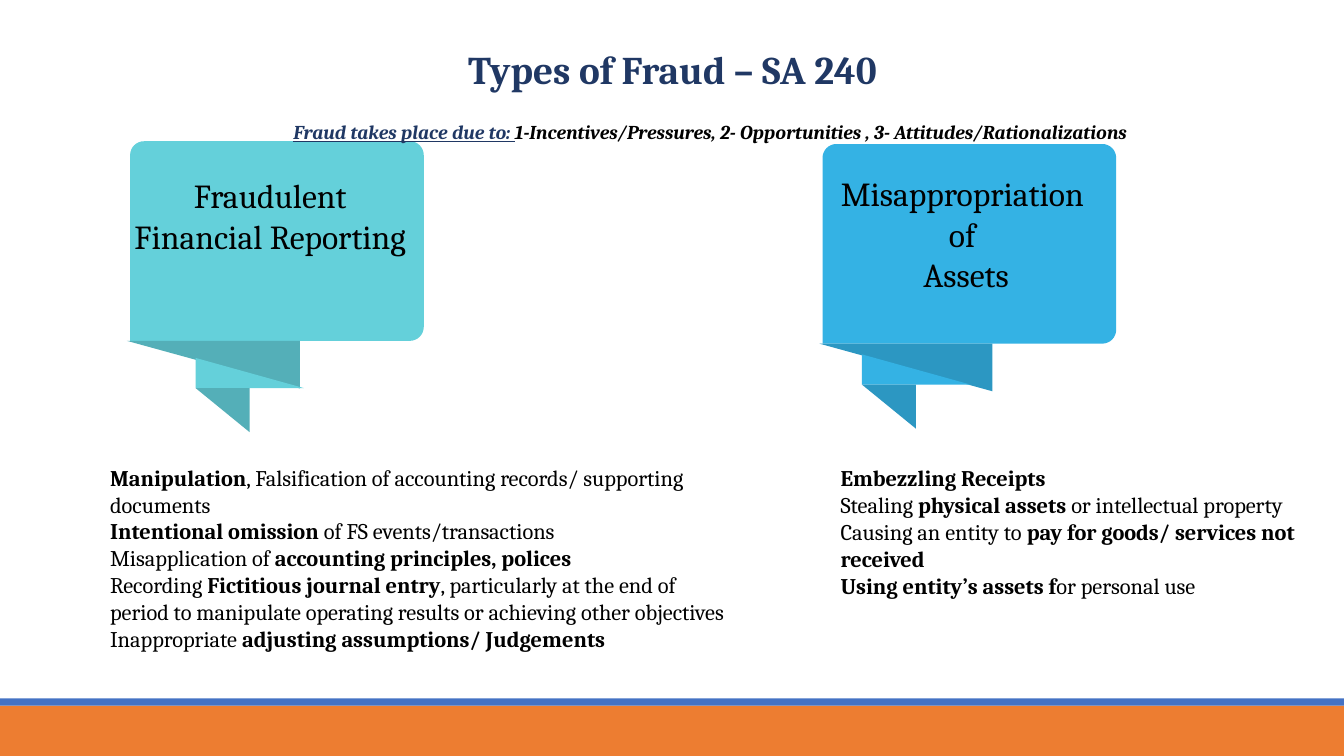
"""Build the slide on the types of fraud under SA 240."""
from dataclasses import dataclass
from math import cos, pi, sin

from lxml import etree
from pptx import Presentation
from pptx.dml.color import RGBColor
from pptx.enum.shapes import MSO_SHAPE
from pptx.enum.text import MSO_ANCHOR, MSO_AUTO_SIZE, PP_ALIGN
from pptx.oxml.ns import qn
from pptx.util import Cm, Pt

RECT = MSO_SHAPE.RECTANGLE
TOP = MSO_ANCHOR.TOP
FIXED = MSO_AUTO_SIZE.NONE
LEFT, MID = PP_ALIGN.LEFT, PP_ALIGN.CENTER
WIDE, HIGH = 33.87, 19.05


@dataclass(frozen=True)
class Theme:
    font: str = "Cambria"
    ink: str = "000000"
    navy: str = "203864"
    blue: str = "4472C4"
    orange: str = "ED7D31"
    teal: tuple = ("64D0DA", "54AFB8")
    sky: tuple = ("34B2E4", "2C97C2")
    title: int = 28
    card: int = 24
    body: int = 16
    note: int = 14


def write(frame, text, *, font, size, color, align=LEFT, lead=1.0,
          indent=0, inset=None, bold=False, italic=False, accent=None):
    """Fill a frame line by line; text between asterisks takes the accent."""
    frame.word_wrap = True
    frame.auto_size = FIXED
    frame.vertical_anchor = TOP
    if inset is not None:
        frame.margin_left = frame.margin_right = Cm(inset)
        frame.margin_top = frame.margin_bottom = Cm(inset)
    for row, line in enumerate(text.split("\n")):
        para = frame.paragraphs[0] if row == 0 else frame.add_paragraph()
        para.alignment = align
        para.line_spacing = lead
        para.space_before = para.space_after = Pt(0)
        props = para._p.get_or_add_pPr()
        props.set("marL", str(Cm(indent)))
        props.set("indent", "0")
        etree.SubElement(props, qn("a:buNone"))
        for part, words in enumerate(line.split("*")):
            if not words:
                continue
            look = {"color": color, "bold": bold, "underline": False}
            if part % 2:
                look.update(accent)
            run = para.add_run()
            run.text = words
            run.font.name = font
            run.font.size = Pt(size)
            run.font.italic = italic
            run.font.bold = look["bold"]
            run.font.underline = look["underline"]
            run.font.color.rgb = RGBColor.from_string(look["color"])


class Deck:
    """Hold the theme and the current slide, and draw each kind of element."""

    def __init__(self, theme):
        self.theme = theme
        self.show = Presentation()
        self.show.slide_width, self.show.slide_height = Cm(WIDE), Cm(HIGH)
        self.slide = self.show.slides.add_slide(self.show.slide_layouts[3])
        for item in list(self.slide.placeholders):
            if item.placeholder_format.idx > 2:
                item._element.getparent().remove(item._element)

    def paint(self, shape, color):
        shape.shadow.inherit = False
        shape.fill.solid()
        shape.fill.fore_color.rgb = RGBColor.from_string(color)
        shape.line.fill.background()

    def bar(self, top, high, color):
        shape = self.slide.shapes.add_shape(
            RECT, Cm(0), Cm(top), Cm(WIDE), Cm(high))
        self.paint(shape, color)

    def shape(self, points, color):
        spots = [(Cm(x), Cm(y)) for x, y in points]
        path = self.slide.shapes.build_freeform(*spots[0])
        path.add_line_segments(spots[1:], close=True)
        self.paint(path.convert_to_shape(), color)

    def bubble(self, left, top, shades, shift, drop):
        light, dark = shades
        wide, high, arc, steps = 7.4, 5.03, 0.35, 8
        right, base = left + wide, top + high
        turns = ((left + arc, top + arc, pi),
                 (right - arc, top + arc, 1.5 * pi),
                 (right - arc, base - arc, 0))
        edge = [(left, base)]
        for x, y, start in turns:
            for step in range(steps + 1):
                angle = start + step * pi / 2 / steps
                edge.append((x + arc * cos(angle), y + arc * sin(angle)))
        self.shape(edge, light)

        end = left + 4.28
        self.shape([(left - 0.08, base), (end, base), (end, base + 1.2)], dark)
        x, y = left + shift, base + drop
        self.shape([(x, y - 0.76), (x, y), (x + 2.73, y)], light)
        self.shape([(x, y), (x + 1.36, y), (x + 1.36, y + 1.11)], dark)

    def place(self, shape, box):
        shape.left, shape.top, shape.width, shape.height = map(Cm, box)
        return shape.text_frame

    def title(self, text, box):
        write(self.place(self.slide.shapes.title, box), text,
              font=self.theme.font, size=self.theme.title,
              color=self.theme.navy, align=MID, lead=1.3, bold=True)

    def list(self, slot, text, box):
        write(self.place(self.slide.placeholders[slot], box), text,
              font=self.theme.font, size=self.theme.body,
              color=self.theme.ink, indent=0.79, accent={"bold": True})

    def label(self, text, box, **look):
        frame = self.slide.shapes.add_textbox(*map(Cm, box)).text_frame
        write(frame, text, font=self.theme.font, color=self.theme.ink,
              align=MID, **look)


def main():
    theme = Theme()
    deck = Deck(theme)
    deck.bar(17.78, 1.27, theme.orange)
    deck.bar(17.6, 0.18, theme.blue)
    deck.title("Types of Fraud – SA 240", (2.34, 0.66, 29.21, 1.65))

    deck.bubble(3.28, 3.56, theme.teal, 1.65, 1.19)
    deck.bubble(20.73, 3.63, theme.sky, 0.99, 1.03)
    deck.label("Fraudulent Financial Reporting", (3.28, 4.42, 7.06, 3.23),
               size=theme.card, inset=0)
    deck.label("Misappropriation \nof \nAssets", (20.65, 4.37, 7.39, 3.56),
               size=theme.card, inset=0)

    deck.list(1, "*Manipulation*, Falsification of accounting records/ "
              "supporting documents\n"
              "*Intentional omission *of FS events/transactions\n"
              "Misapplication of *accounting principles, polices*\n"
              "Recording *Fictitious journal entry*, particularly at the end "
              "of period to manipulate operating results or achieving other "
              "objectives\n"
              "Inappropriate *adjusting assumptions/ Judgements*",
              (1.73, 11.56, 16.84, 5.26))
    deck.list(2, "*Embezzling Receipts*\n"
              "Stealing *physical assets *or intellectual property\n"
              "Causing an entity to *pay for goods/ services not received*\n"
              "*Using entity’s assets f*or personal use",
              (20.14, 11.58, 13.7, 4.5))
    deck.label("*Fraud takes place due to: *1-Incentives/Pressures, "
               "2- Opportunities , 3- Attitudes/Rationalizations",
               (3.2, 2.72, 29.41, 1.1), size=theme.note, lead=1.3,
               bold=True, italic=True,
               accent={"color": theme.navy, "underline": True})
    deck.show.save("out.pptx")


if __name__ == "__main__":
    main()
